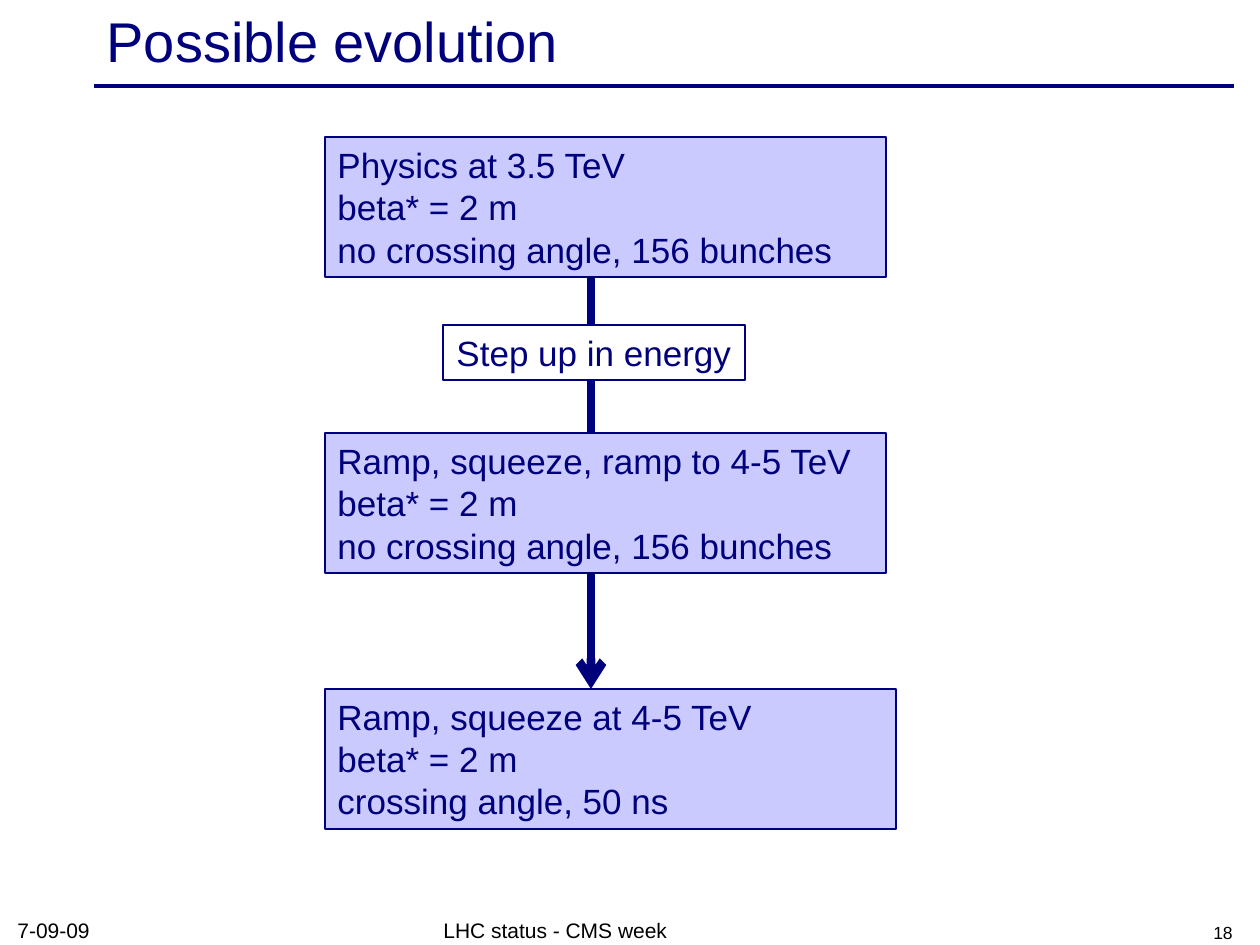
from lxml import etree
from pptx import Presentation
from pptx import util as u
from pptx.dml import color
from pptx.enum import shapes, text
from pptx.oxml import ns

PX = 914400 / 126
NAVY, LILAC, WHITE, BLACK = "00007D", "CACAFF", "FFFFFF", "000000"
LEFT, CENTER, RIGHT = text.PP_ALIGN.LEFT, text.PP_ALIGN.CENTER, text.PP_ALIGN.RIGHT


def px(*lengths):
    return [round(length * PX) for length in lengths]


def rgb(code):
    return color.RGBColor.from_string(code)


def write(frame, words, size, ink, align=LEFT, anchor=text.MSO_ANCHOR.MIDDLE):
    frame.text = words
    frame.vertical_anchor = anchor
    paragraph = frame.paragraphs[0]
    paragraph.alignment = align
    for run in paragraph.runs:
        run.font.name = "Arial"
        run.font.size = u.Pt(size)
        run.font.color.rgb = rgb(ink)


def add_line(slide, start, end, width, arrow=False):
    line = slide.shapes.add_connector(
        shapes.MSO_CONNECTOR.STRAIGHT, *px(*start, *end))
    line.line.color.rgb = rgb(NAVY)
    line.line.width = u.Pt(width)
    if arrow:
        tail = etree.SubElement(line.line._get_or_add_ln(), ns.qn("a:tailEnd"))
        tail.set("type", "arrow")
    etree.SubElement(line._element.spPr, ns.qn("a:effectLst"))


def add_box(slide, box, words, fill, align=LEFT, wrap=True):
    step = slide.shapes.add_shape(shapes.MSO_SHAPE.RECTANGLE, *px(*box))
    step.shadow.inherit = False
    step.fill.solid()
    step.fill.fore_color.rgb = rgb(fill)
    step.line.color.rgb = rgb(NAVY)
    step.line.width = u.Pt(1)
    step.text_frame.word_wrap = wrap
    step.text_frame.auto_size = text.MSO_AUTO_SIZE.SHAPE_TO_FIT_TEXT
    write(step.text_frame, words, 20, NAVY, align)


def add_header(slide, box, words):
    left, top, width, height = box
    title = slide.shapes.title
    title.left, title.top, title.width, title.height = px(*box)
    write(title.text_frame, words, 32, NAVY)
    add_line(slide, (left, top + 82), (left + 1140, top + 82), 2)


def add_flow(slide, box):
    left, top, width, height = box
    steps = [
        (0, width, "Physics at 3.5 TeV\vbeta* = 2 m\vno crossing angle, 156 bunches"),
        (296, width, "Ramp, squeeze, ramp to 4-5 TeV\vbeta* = 2 m\v"
                     "no crossing angle, 156 bunches"),
        (552, width + 10, "Ramp, squeeze at 4-5 TeV\vbeta* = 2 m\vcrossing angle, 50 ns"),
    ]
    step_height = 140
    axis = left + 266
    add_line(slide, (axis, top + step_height), (axis, top + 552), 5, arrow=True)
    for offset, step_width, words in steps:
        add_box(slide, (left, top + offset, step_width, step_height), words, LILAC)
    add_box(slide, (left + 118, top + 188, 302, 55), "Step up in energy",
            WHITE, CENTER, wrap=False)


def add_footer(slide, box):
    left, top, width, height = box
    parts = [
        (0, 294, "7-09-09", 12, LEFT),
        (426, 399, "LHC status - CMS week", 12, LEFT),
        (width - 294, 294, "18", 10, RIGHT),
    ]
    for offset, part_width, words, size, align in parts:
        part = slide.shapes.add_textbox(*px(left + offset, top, part_width, height))
        part.text_frame.word_wrap = True
        write(part.text_frame, words, size, BLACK, align, text.MSO_ANCHOR.BOTTOM)


def main():
    deck = Presentation()
    deck.slide_width, deck.slide_height = px(1260, 945)
    slide = deck.slides.add_slide(deck.slide_layouts[5])
    add_header(slide, (94, 4, 1134, 72), "Possible evolution")
    add_flow(slide, (325, 137, 561, 692))
    add_footer(slide, (5, 913, 1240, 36))
    deck.save("out.pptx")


if __name__ == "__main__":
    main()
